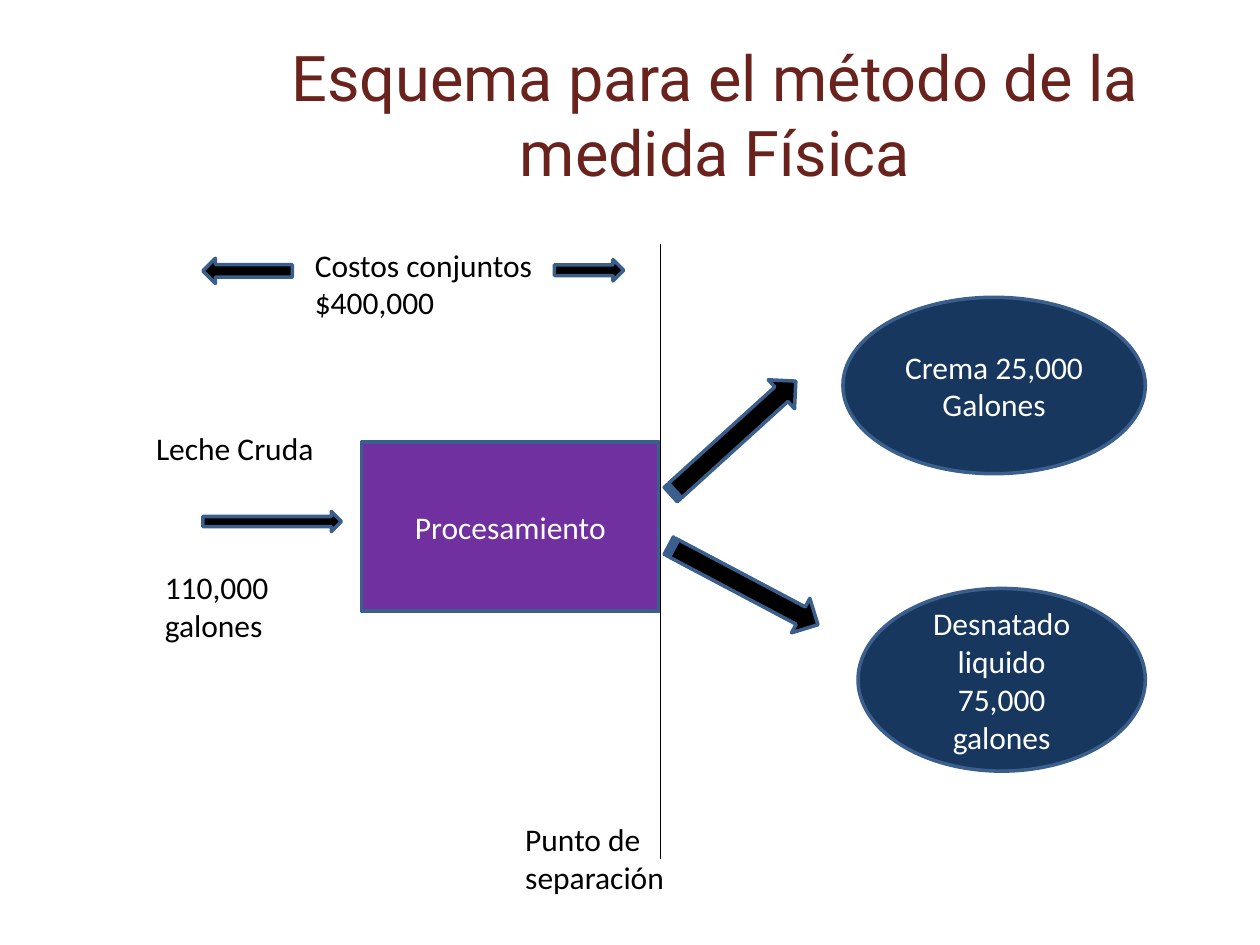
from lxml import etree
from pptx import Presentation
from pptx.dml.color import RGBColor
from pptx.enum.shapes import MSO_CONNECTOR, MSO_SHAPE as SHAPE
from pptx.enum.text import MSO_ANCHOR, MSO_AUTO_SIZE, PP_ALIGN
from pptx.oxml.ns import qn
from pptx.util import Inches, Pt

COLORS = {
    name: RGBColor.from_string(value)
    for name, value in {
        "title": "6A221D", "process": "7030A0", "product": "17375E",
        "outline": "3A5F8C", "black": "000000", "white": "FFFFFF",
    }.items()
}


def write(shape, text, color, align, size=18, font="Calibri"):
    tf = shape.text_frame
    tf.word_wrap = True
    p = tf.paragraphs[0]
    p.alignment = align
    r = p.add_run()
    r.text = text
    for name, value in {"size": Pt(size), "name": font, "bold": False}.items():
        setattr(r.font, name, value)
    r.font.color.rgb = COLORS[color]
    return tf


def add_outlined(kind, box, fill):
    sp = s.shapes.add_shape(kind, *map(Inches, box))
    sp.shadow.inherit = False
    sp.fill.solid()
    sp.fill.fore_color.rgb = COLORS[fill]
    sp.line.color.rgb = COLORS["outline"]
    sp.line.width = Pt(2)
    return sp


prs = Presentation()
prs.slide_width, prs.slide_height = Inches(10), Inches(7.5)
s = prs.slides.add_slide(prs.slide_layouts[5])

title = s.shapes.title
title.left, title.top, title.width, title.height = map(Inches, (1.85, 0.48, 7.65, 0.85))
tf = write(title, "Esquema para el método de la medida Física", "title",
           PP_ALIGN.CENTER, 36, "Roboto")
tf.vertical_anchor = MSO_ANCHOR.MIDDLE
tf.auto_size = MSO_AUTO_SIZE.NONE

# Process and its products
for kind, box, fill, text in [
    (SHAPE.RECTANGLE, (2.87, 3.51, 2.36, 1.34), "process", "Procesamiento"),
    (SHAPE.OVAL, (6.69, 2.36, 2.4, 1.4), "product", "Crema 25,000 Galones"),
    (SHAPE.OVAL, (6.81, 4.67, 2.28, 1.45), "product", "Desnatado liquido 75,000 galones"),
]:
    tf = write(add_outlined(kind, box, fill), text, "white", PP_ALIGN.CENTER)
    tf.vertical_anchor = MSO_ANCHOR.MIDDLE

# Split-off line
split = s.shapes.add_connector(
    MSO_CONNECTOR.STRAIGHT, Inches(5.24), Inches(1.94), Inches(5.24), Inches(6.82))
split.line.color.rgb = COLORS["black"]
split.line.width = Pt(0.75)
etree.SubElement(split._element.spPr, qn("a:effectLst"))

# Arrows: raw milk, two products, joint costs
for kind, box, rotation in [
    (SHAPE.RIGHT_ARROW, (1.61, 4.06, 1.1, 0.16), 0),
    (SHAPE.STRIPED_RIGHT_ARROW, (5.15, 3.32, 1.34, 0.31), 317.8),
    (SHAPE.STRIPED_RIGHT_ARROW, (5.23, 4.49, 1.34, 0.31), 27.9),
    (SHAPE.RIGHT_ARROW, (4.4, 2.06, 0.55, 0.17), 0),
    (SHAPE.LEFT_ARROW, (1.61, 2.05, 0.71, 0.2), 0),
]:
    add_outlined(kind, box, "black").rotation = rotation

# Labels
for box, text in [
    ((1.14, 3.36, 1.73, 0.4), "Leche Cruda"),
    ((1.21, 4.46, 1.73, 0.71), "110,000 galones"),
    ((4.07, 6.46, 1.89, 0.71), "Punto de separación"),
    ((2.4, 1.9, 2.76, 0.71), "Costos conjuntos $400,000"),
]:
    label = s.shapes.add_textbox(*map(Inches, box))
    tf = write(label, text, "black", PP_ALIGN.LEFT)
    tf.auto_size = MSO_AUTO_SIZE.SHAPE_TO_FIT_TEXT

prs.save("out.pptx")
